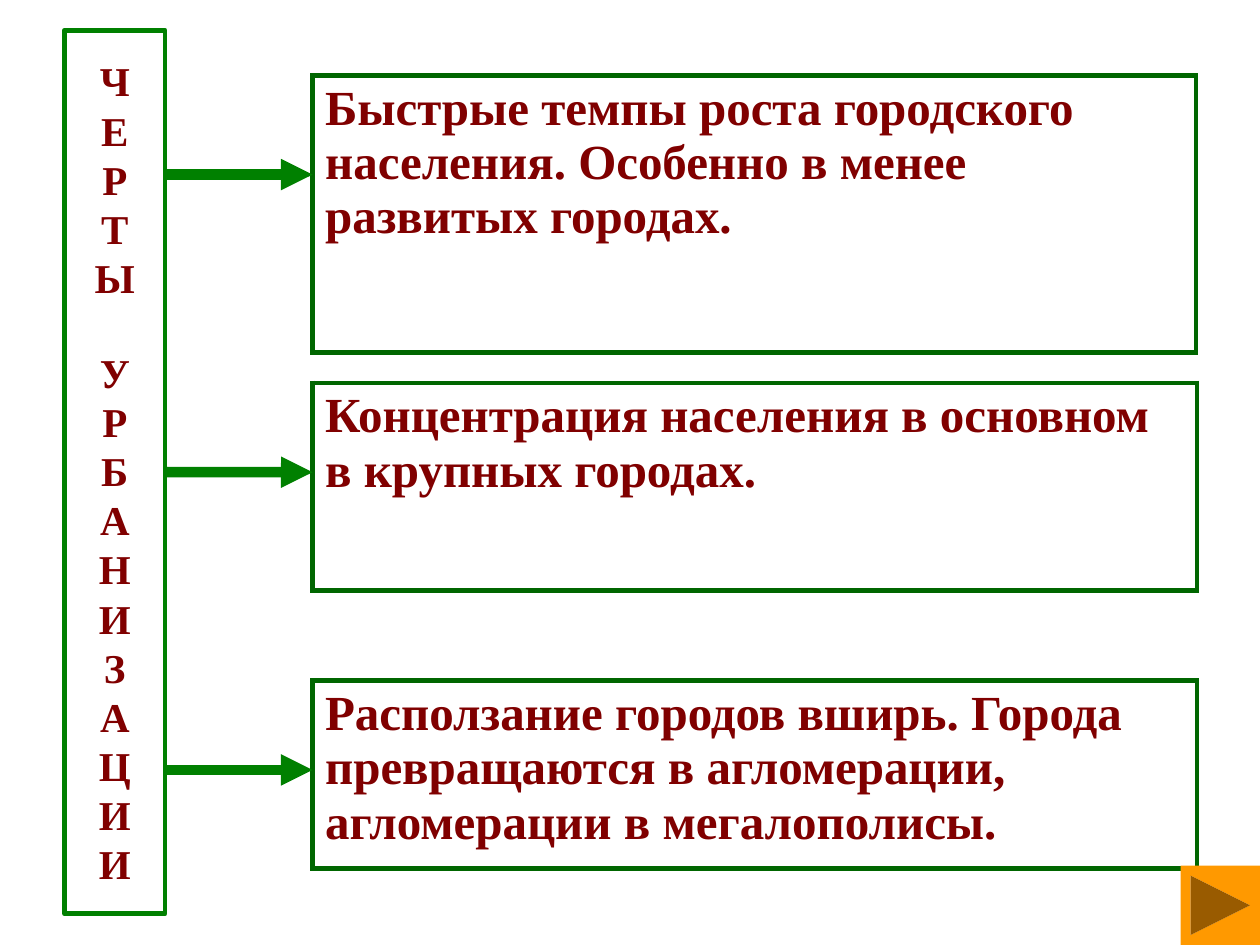
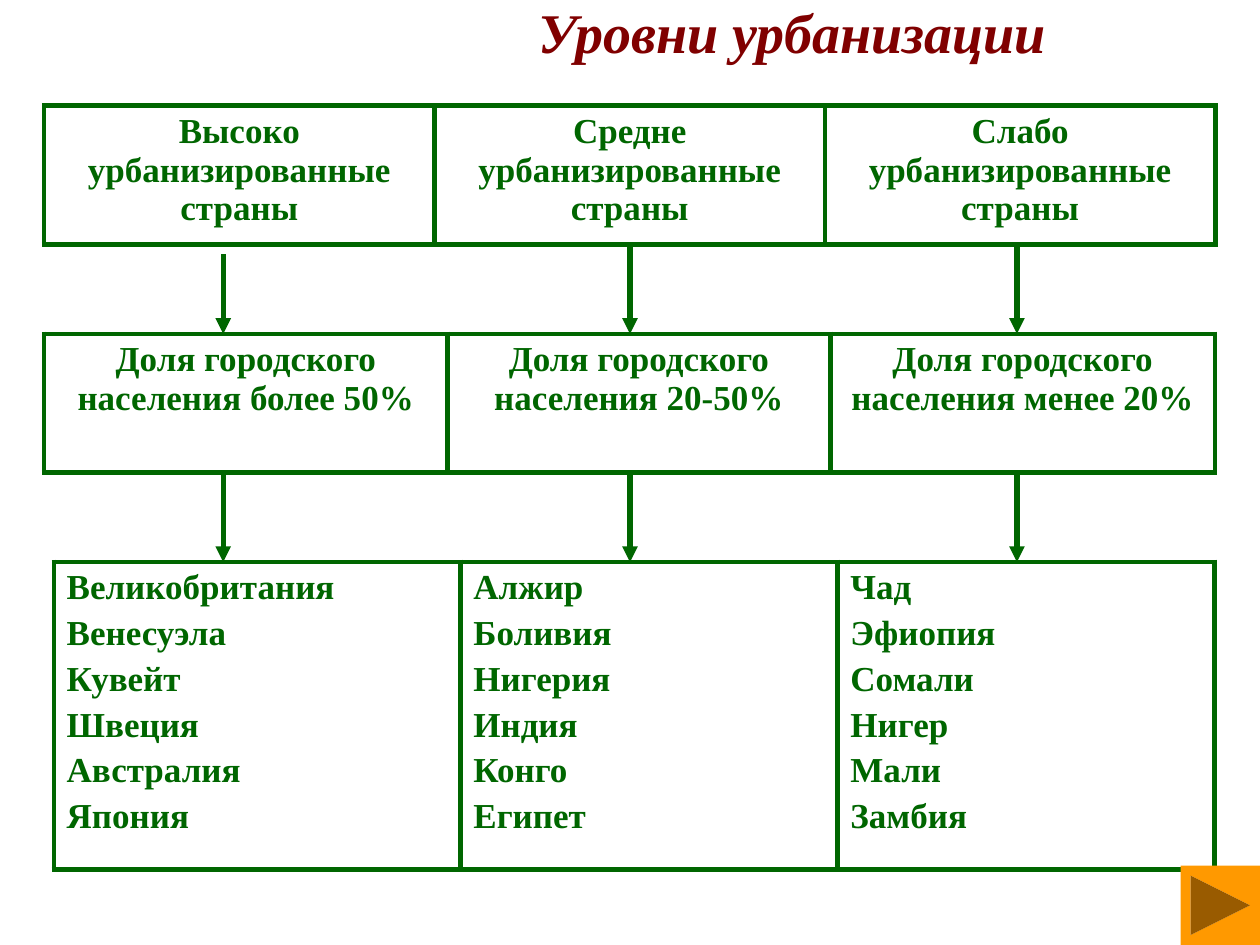
"""Build two slides on the features and levels of urbanization."""
from dataclasses import dataclass

from lxml.etree import SubElement
from pptx import Presentation
from pptx.dml.color import RGBColor
from pptx.enum.shapes import MSO_CONNECTOR, MSO_SHAPE
from pptx.enum.text import MSO_ANCHOR, PP_ALIGN
from pptx.oxml import parse_xml
from pptx.oxml.ns import nsdecls, qn
from pptx.util import Cm, Pt


@dataclass(frozen=True)
class Theme:
    font: str = "Times New Roman"
    maroon: RGBColor = RGBColor(0x80, 0x00, 0x00)
    green: RGBColor = RGBColor(0x00, 0x80, 0x00)
    dark_green: RGBColor = RGBColor(0x00, 0x66, 0x00)
    orange: RGBColor = RGBColor(0xFF, 0x99, 0x00)
    title: float = 32
    side_title: float = 23.4
    feature: float = 28
    level: float = 20
    border: float = 3


T = Theme()


def add_grid(s, x, y, cols, h, texts, size, color, align):
    gf = s.shapes.add_table(1, len(cols), Cm(x), Cm(y), Cm(sum(cols)), Cm(h))
    tbl = gf.table
    tbl.first_row = tbl.horz_banding = False
    tbl.rows[0].height = Cm(h)
    for i, (w, text) in enumerate(zip(cols, texts)):
        tbl.columns[i].width = Cm(w)
        cell = tbl.cell(0, i)
        cell.fill.background()
        tcPr = cell._tc.get_or_add_tcPr()
        for j, side in enumerate("LRTB"):
            tcPr.insert(j, parse_xml(
                f'<a:ln{side} {nsdecls("a")} w="{Pt(T.border)}"><a:solidFill>'
                f'<a:srgbClr val="{T.dark_green}"/></a:solidFill></a:ln{side}>'))
        tf = cell.text_frame
        for j, line in enumerate(text.split("\n")):
            p = tf.add_paragraph() if j else tf.paragraphs[0]
            p.alignment = align
            p.space_before = Pt(0.2 * size if j else 0)
            r = p.add_run()
            r.text = line
            r.font.name, r.font.size, r.font.bold = T.font, Pt(size), True
            r.font.color.rgb = color


def add_arrow(s, x1, y1, x2, y2, color, width):
    cx = s.shapes.add_connector(MSO_CONNECTOR.STRAIGHT, Cm(x1), Cm(y1), Cm(x2), Cm(y2))
    cx.line.color.rgb = color
    cx.line.width = Pt(width)
    SubElement(cx.line._get_or_add_ln(), qn("a:tailEnd"), type="triangle")
    SubElement(cx._element.spPr, qn("a:effectLst"))
    return cx


prs = Presentation()
prs.slide_width, prs.slide_height = Cm(25.4), Cm(19.05)
blank = prs.slide_layouts[6]

s = prs.slides.add_slide(blank)
side = s.shapes.add_shape(MSO_SHAPE.RECTANGLE, Cm(1.3), Cm(0.61), Cm(2.03), Cm(17.81))
side.shadow.inherit = False
side.fill.background()
side.line.color.rgb = T.green
side.line.width = Pt(2.75)
tf = side.text_frame
tf.word_wrap = True
tf.vertical_anchor = MSO_ANCHOR.MIDDLE
for i, word in enumerate(["ЧЕРТЫ", "УРБАНИЗАЦИИ"]):
    p = tf.add_paragraph() if i else tf.paragraphs[0]
    p.alignment = PP_ALIGN.CENTER
    p.space_before = Pt(26 * i)
    for j, letter in enumerate(word):
        if j:
            p.add_line_break()
        r = p.add_run()
        r.text = letter
        r.font.name, r.font.size, r.font.bold = T.font, Pt(T.side_title), True
        r.font.color.rgb = T.maroon

features = [
    (1.52, 17.81, 5.59, "Быстрые темпы роста городского населения. Особенно в менее развитых городах."),
    (7.72, 17.83, 4.19, "Концентрация населения в основном в крупных городах."),
    (13.72, 17.83, 3.79, "Расползание городов вширь. Города превращаются в агломерации, "
                         "агломерации в мегалополисы."),
]
for i, (y, w, h, text) in enumerate(features):
    add_grid(s, 6.3, y, [w], h, [text], T.feature, T.maroon, PP_ALIGN.LEFT)
    arrow_y = 3.52 + 6 * i
    cx = add_arrow(s, 3.33, arrow_y, 6.3, arrow_y, T.green, 6)
    if i == 1:
        cx.begin_connect(side, 3)

s = prs.slides.add_slide(blank)
tf = s.shapes.add_textbox(Cm(9), Cm(0), Cm(13.95), Cm(1.25)).text_frame
tf.word_wrap = True
tf.margin_top = tf.margin_bottom = 0
tf.vertical_anchor = MSO_ANCHOR.MIDDLE
p = tf.paragraphs[0]
p.alignment = PP_ALIGN.CENTER
r = p.add_run()
r.text = "Уровни урбанизации"
r.font.name, r.font.size = T.font, Pt(T.title)
r.font.bold = r.font.italic = True
r.font.color.rgb = T.maroon

levels = [f"{level} урбанизированные страны" for level in ("Высоко", "Средне", "Слабо")]
shares = [f"Доля городского населения {share}" for share in ("более 50%", "20-50%", "менее 20%")]
countries = [
    "Великобритания\nВенесуэла\nКувейт\nШвеция\nАвстралия\nЯпония",
    "Алжир\nБоливия\nНигерия\nИндия\nКонго\nЕгипет",
    "Чад\nЭфиопия\nСомали\nНигер\nМали\nЗамбия",
]
grids = [
    (0.89, 2.13, [7.87, 7.87, 7.87], 2.59, levels, PP_ALIGN.CENTER),
    (0.89, 6.73, [8.13, 7.72, 7.75], 2.79, shares, PP_ALIGN.CENTER),
    (1.09, 11.33, [8.2, 7.6, 7.59], 6.2, countries, PP_ALIGN.LEFT),
]
for x, y, cols, h, texts, align in grids:
    add_grid(s, x, y, cols, h, texts, T.level, T.dark_green, align)
for x, top in [(4.5, 5.13), (12.7, 4.93), (20.5, 4.93)]:
    for y1, y2 in [(top, 6.73), (9.53, 11.33)]:
        add_arrow(s, x, y1, x, y2, T.dark_green, T.border)

for s in prs.slides:
    sp = s.shapes.add_shape(MSO_SHAPE.ACTION_BUTTON_FORWARD_OR_NEXT,
                            Cm(23.8), Cm(17.45), Cm(1.6), Cm(1.6))
    sp.shadow.inherit = False
    sp.fill.solid()
    sp.fill.fore_color.rgb = T.orange
    sp.line.fill.background()

prs.save("out.pptx")
